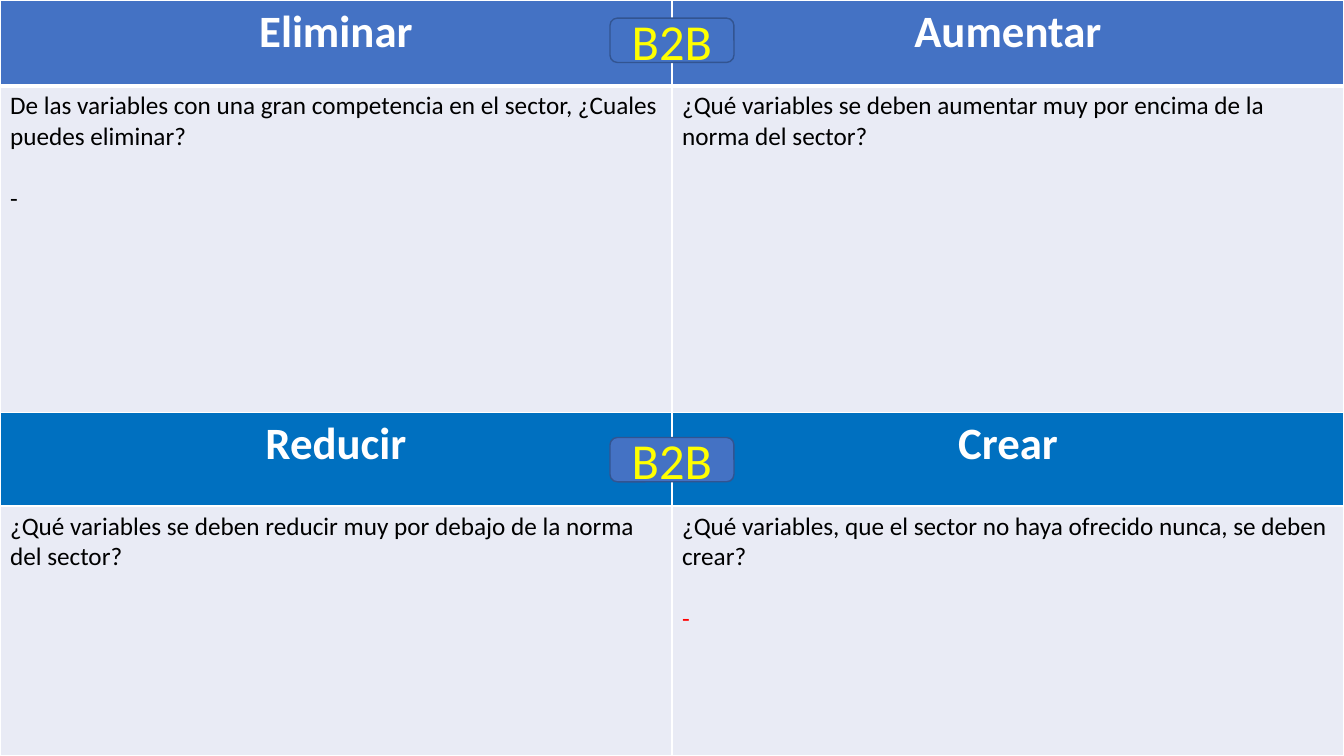
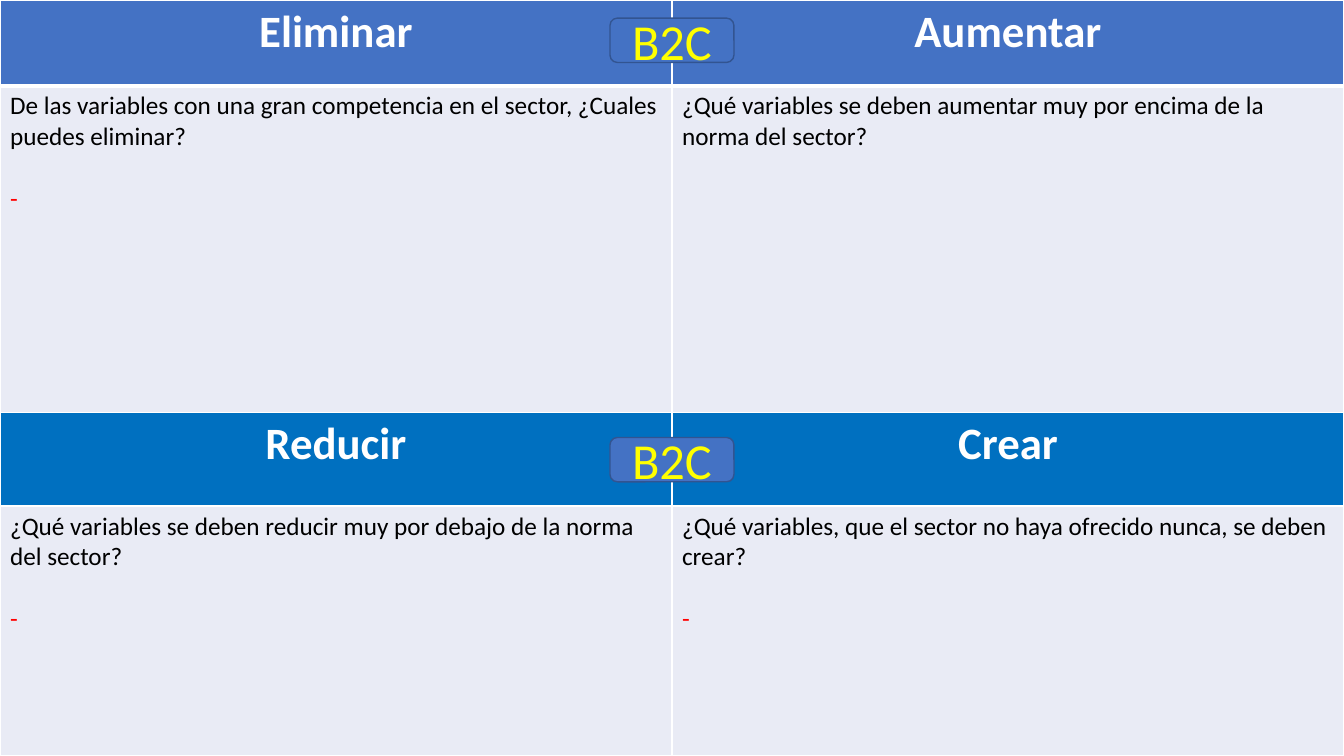
from dataclasses import dataclass
from typing import Optional

from lxml.etree import SubElement
from pptx import Presentation
from pptx.dml.color import RGBColor as RGB
from pptx.enum.shapes import MSO_SHAPE as SHAPE
from pptx.enum.text import MSO_ANCHOR as ANCHOR, PP_ALIGN as ALIGN
from pptx.oxml.ns import qn
from pptx.slide import Slide
from pptx.table import _Cell as Cell
from pptx.text.text import _Paragraph as Paragraph
from pptx.util import Inches, Pt


@dataclass(frozen=True)
class Theme:
    font: str = "Calibri"
    blue: str = "4472C4"
    deep_blue: str = "0070C0"
    outline: str = "325491"
    body_fill: str = "E9EBF5"
    white: str = "FFFFFF"
    black: str = "000000"
    red: str = "FF0000"
    yellow: str = "FFFF00"
    header_size: int = 32
    body_size: int = 18
    badge_size: int = 36
    answer_gap: int = 22  # one body line


@dataclass(frozen=True)
class Quadrant:
    title: str
    question: str


@dataclass(frozen=True)
class Matrix:
    badge: str
    # Dash colour per quadrant, None where there is no dash
    dashes: tuple[Optional[str], ...]


T = Theme()
SLIDE_W, SLIDE_H = Inches(13.33), Inches(7.5)
ROW_HEIGHTS = (0.85, 3.24, 0.93, 2.48)
BADGE_W, BADGE_H = Inches(1.23), Inches(0.44)
BADGE_TOPS = (0.18, 4.34)
BAND_FILLS = (T.blue, T.deep_blue)

QUADRANTS = (
    Quadrant("Eliminar", "De las variables con una gran competencia en el sector, "
             "¿Cuales puedes eliminar?"),
    Quadrant("Aumentar", "¿Qué variables se deben aumentar muy por encima de la "
             "norma del sector?"),
    Quadrant("Reducir", "¿Qué variables se deben reducir muy por debajo de la "
             "norma del sector?"),
    Quadrant("Crear", "¿Qué variables, que el sector no haya ofrecido nunca, se "
             "deben crear?"),
)
MATRICES = (
    Matrix("B2B", (T.black, None, None, T.red)),
    Matrix("B2C", (T.red, None, T.red, T.red)),
)


def write(p: Paragraph, text: str, size: int, color: str,
          bold: bool = False, align: ALIGN = ALIGN.LEFT) -> None:
    p.text = text
    p.alignment = align
    for r in p.runs:
        r.font.name, r.font.size, r.font.bold = T.font, Pt(size), bold
        r.font.color.rgb = RGB.from_string(color)


def style_cell(cell: Cell, fill: str, top: int = 1, bottom: int = 1) -> None:
    """Set the borders, then the fill, in the order the schema asks for."""
    tc_pr = cell._tc.get_or_add_tcPr()
    for side, width in (("L", 1), ("R", 1), ("T", top), ("B", bottom)):
        ln = SubElement(tc_pr, qn(f"a:ln{side}"), w=str(Pt(width)))
        solid = SubElement(ln, qn("a:solidFill"))
        SubElement(solid, qn("a:srgbClr"), val=T.white)
    cell.fill.solid()
    cell.fill.fore_color.rgb = RGB.from_string(fill)


def add_matrix_table(s: Slide, dashes: tuple[Optional[str], ...]) -> None:
    table = s.shapes.add_table(len(ROW_HEIGHTS), 2, 0, 0, SLIDE_W, SLIDE_H).table
    for row, height in zip(table.rows, ROW_HEIGHTS):
        row.height = Inches(height)

    for i, (quadrant, dash) in enumerate(zip(QUADRANTS, dashes)):
        band, col = divmod(i, 2)
        rule = 3 if band == 0 else 1  # thick rule under the first header

        header = table.cell(2 * band, col)
        style_cell(header, BAND_FILLS[band], bottom=rule)
        write(header.text_frame.paragraphs[0], quadrant.title, T.header_size,
              T.white, bold=True, align=ALIGN.CENTER)

        body = table.cell(2 * band + 1, col)
        style_cell(body, T.body_fill, top=rule)
        tf = body.text_frame
        write(tf.paragraphs[0], quadrant.question, T.body_size, T.black)
        if dash:
            p = tf.add_paragraph()
            p.space_before = Pt(T.answer_gap)
            write(p, "-", T.body_size, dash)


def add_badge(s: Slide, text: str, top: float) -> None:
    sp = s.shapes.add_shape(SHAPE.ROUNDED_RECTANGLE, (SLIDE_W - BADGE_W) // 2,
                            Inches(top), BADGE_W, BADGE_H)
    sp.shadow.inherit = False
    sp.fill.solid()
    sp.fill.fore_color.rgb = RGB.from_string(T.blue)
    sp.line.color.rgb = RGB.from_string(T.outline)
    sp.line.width = Pt(1)
    tf = sp.text_frame
    tf.vertical_anchor = ANCHOR.MIDDLE
    write(tf.paragraphs[0], text, T.badge_size, T.yellow, align=ALIGN.CENTER)


def main() -> None:
    prs = Presentation()
    prs.slide_width, prs.slide_height = SLIDE_W, SLIDE_H
    blank = prs.slide_layouts[6]
    for matrix in MATRICES:
        s = prs.slides.add_slide(blank)
        add_matrix_table(s, matrix.dashes)
        for top in BADGE_TOPS:
            add_badge(s, matrix.badge, top)
    prs.save("out.pptx")


if __name__ == "__main__":
    main()
